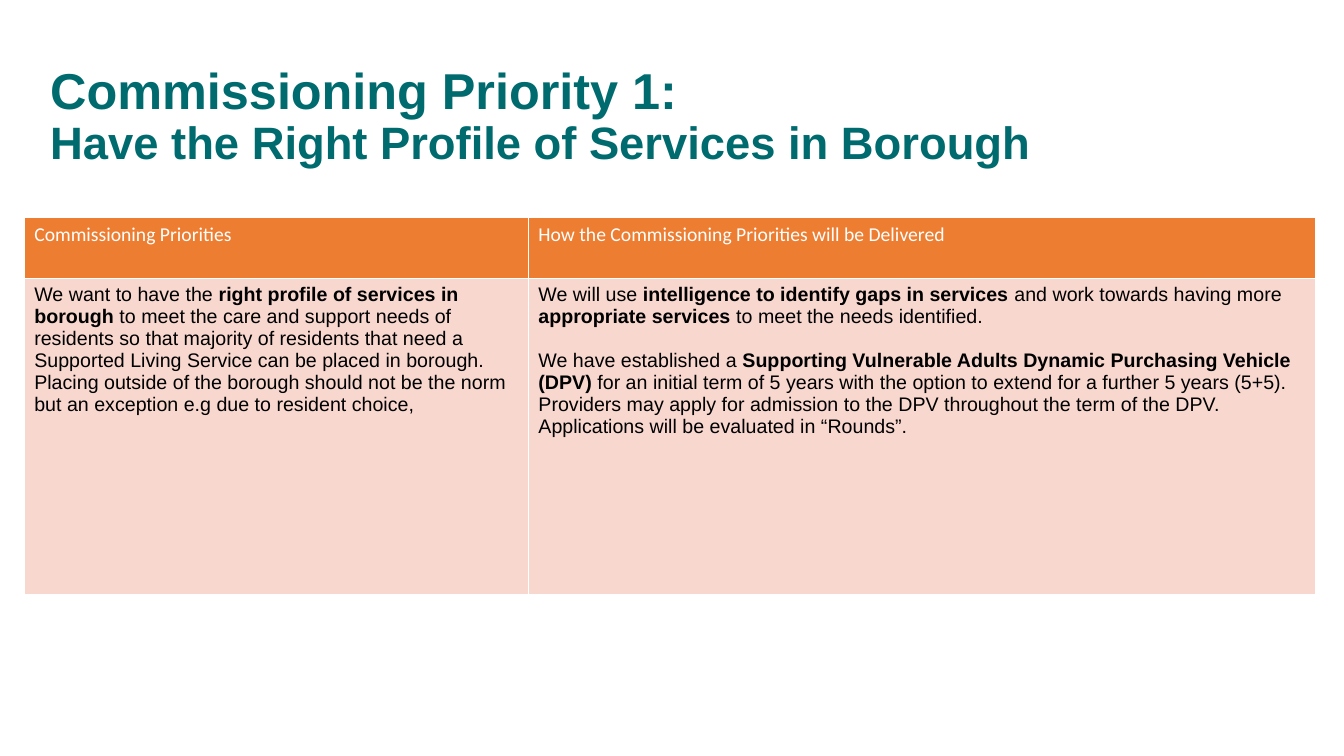
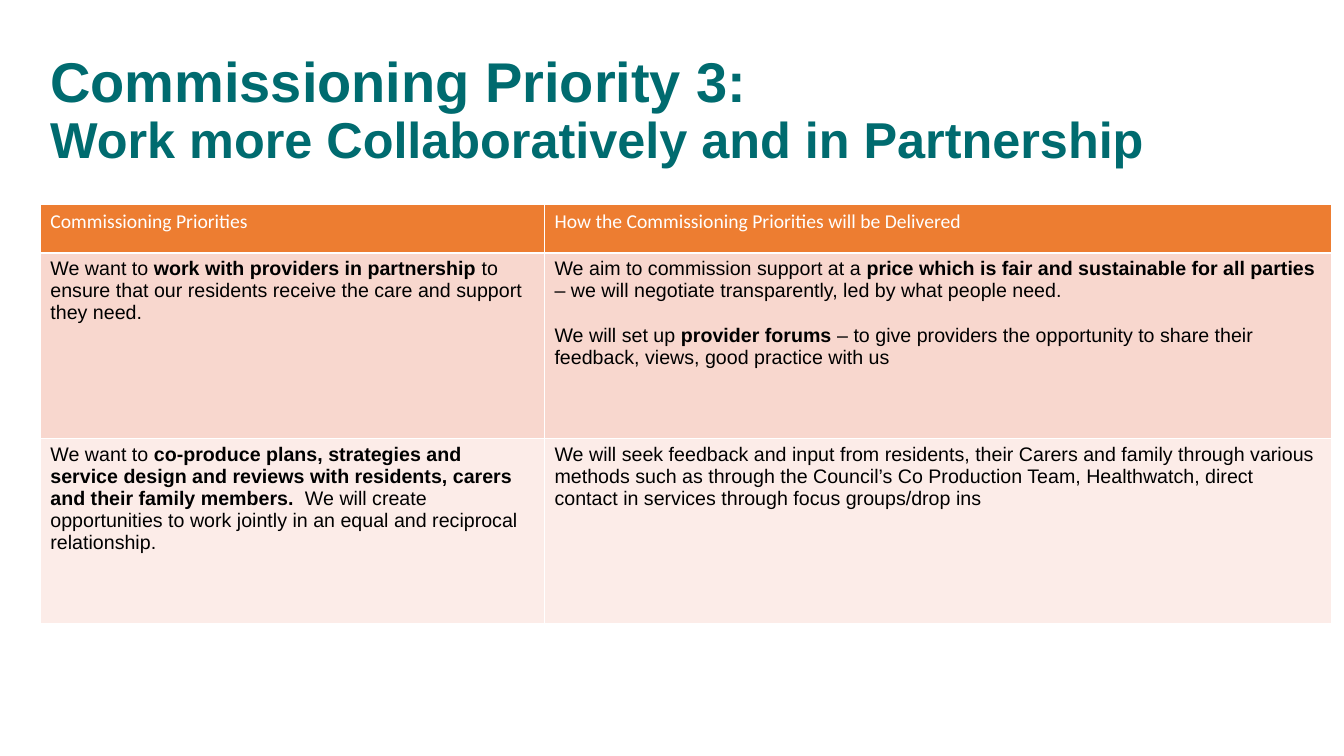
from pptx import Presentation
from pptx.dml.color import RGBColor
from pptx.enum.text import MSO_ANCHOR
from pptx.util import Inches, Pt

BOTTOM = MSO_ANCHOR.BOTTOM
TEAL, ORANGE, WHITE, BLACK = "006B6F", "ED7D31", "FFFFFF", "000000"
BANDS = ["F8D7CE", "FCECE8"]
HEADS = ["Commissioning Priorities",
         "How the Commissioning Priorities will be Delivered"]
COLS = [5, 7.81]


def color(code):
    return RGBColor.from_string(code)


class Deck:
    def __init__(self):
        self.file = Presentation()
        self.file.slide_width = Inches(13.33)
        self.file.slide_height = Inches(7.5)
        self.slide = None

    def page(self):
        self.slide = self.file.slides.add_slide(self.file.slide_layouts[6])

    def style(self, para, name, size, code, bold=False):
        font = para.font
        font.name, font.size, font.bold = name, Pt(size), bold
        font.color.rgb = color(code)

    def title(self, head, sub, sizes, width):
        box = self.slide.shapes.add_textbox(
            Inches(0.4), Inches(0.04), Inches(width), Inches(1.69))
        frame = box.text_frame
        frame.word_wrap = True
        frame.vertical_anchor = BOTTOM
        para = frame.paragraphs[0]
        para.line_spacing = 0.9
        self.style(para, "Arial", sizes[0], TEAL, True)
        para.add_run().text = head
        para.add_line_break()
        run = para.add_run()
        run.text = sub
        run.font.size = Pt(sizes[1])

    def cell(self, cell, paras, fill, name, code):
        """Fill a cell with paragraphs; text between ** marks is bold."""
        cell.fill.solid()
        cell.fill.fore_color.rgb = color(fill)
        frame = cell.text_frame
        for i, text in enumerate(paras):
            para = frame.add_paragraph() if i else frame.paragraphs[0]
            if i:
                para.space_before = Pt(16)
            self.style(para, name, 14, code)
            for j, part in enumerate(text.split("**")):
                if part:
                    run = para.add_run()
                    run.text = part
                    run.font.bold = j % 2 == 1

    def table(self, left, top, heights, rows):
        table = self.slide.shapes.add_table(
            len(heights), len(COLS), Inches(left), Inches(top),
            Inches(sum(COLS)), Inches(sum(heights))).table
        for col, width in zip(table.columns, COLS):
            col.width = Inches(width)
        for row, height in zip(table.rows, heights):
            row.height = Inches(height)
        for c, head in enumerate(HEADS):
            self.cell(table.cell(0, c), [head], ORANGE, "Calibri", WHITE)
        for r, row in enumerate(rows):
            for c, paras in enumerate(row):
                self.cell(table.cell(r + 1, c), paras,
                          BANDS[r % 2], "Arial", BLACK)


def main():
    deck = Deck()

    deck.page()
    deck.title("Commissioning Priority 1:",
               "Have the Right Profile of Services in Borough",
               (36, 32.4), 10.9)
    deck.table(0.24, 2.16, [0.6, 3.14], [
        [["We want to have the **right profile of services in borough **"
          "to meet the care and support needs of residents so that majority "
          "of residents that need a Supported Living Service can be placed "
          "in borough. Placing outside of the borough should not be the norm "
          "but an exception e.g due to resident choice,"],
         ["We will use **intelligence to identify gaps in services** and "
          "work towards having more **appropriate services **to meet the "
          "needs identified.",
          "We have established a **Supporting Vulnerable Adults Dynamic "
          "Purchasing Vehicle (DPV) **for an initial term of 5 years with "
          "the option to extend for a further 5 years (5+5). Providers may "
          "apply for admission to the DPV throughout the term of the DPV. "
          "Applications will be evaluated in “Rounds”."]],
    ])

    deck.page()
    deck.title("Commissioning Priority 3:",
               "Work more Collaboratively and in Partnership",
               (40, 36), 11.23)
    deck.table(0.4, 2.03, [0.48, 1.84, 1.84], [
        [["We want to **work with providers in partnership **to ensure that "
          "our residents receive the care and support they need."],
         ["We aim to commission support at a **price which is fair and "
          "sustainable for all parties** – we will negotiate transparently, "
          "led by what people need.",
          "We will set up **provider forums **– to give providers the "
          "opportunity to share their feedback, views, good practice "
          "with us"]],
        [["We want to **co-produce plans, strategies and service design and "
          "reviews with residents, carers and their family members. ** We "
          "will create opportunities to work jointly in an equal and "
          "reciprocal relationship."],
         ["We will seek feedback and input from residents, their Carers and "
          "family through various methods such as through the Council’s Co "
          "Production Team, Healthwatch, direct contact in services through "
          "focus groups/drop ins"]],
    ])

    deck.file.save("out.pptx")


if __name__ == "__main__":
    main()
